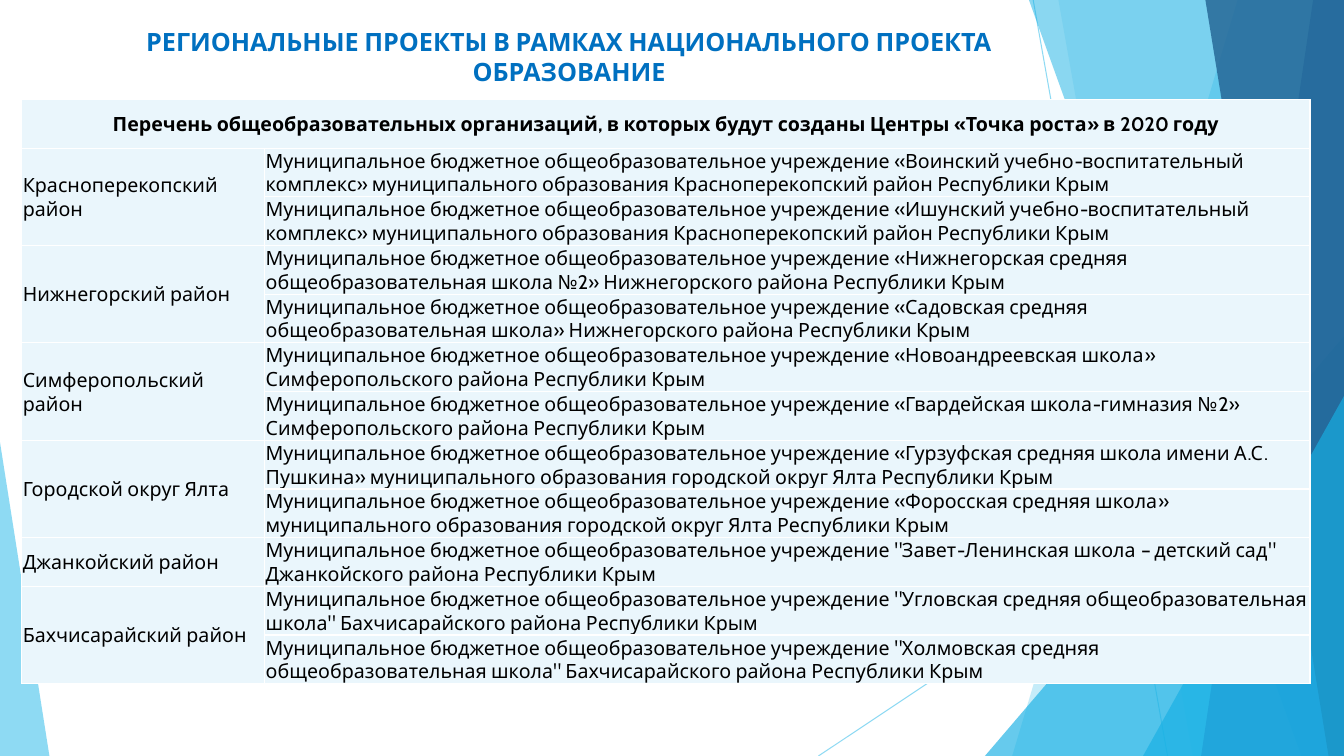
from lxml import etree
from pptx import Presentation
from pptx import util as u
from pptx.dml.color import RGBColor
from pptx.enum import shapes, text
from pptx.oxml import ns

FONT = "Cabin"
TITLE = ["РЕГИОНАЛЬНЫЕ ПРОЕКТЫ В РАМКАХ НАЦИОНАЛЬНОГО ПРОЕКТА", "ОБРАЗОВАНИЕ"]
HEADER = ("Перечень общеобразовательных организаций, в которых будут созданы "
          "Центры «Точка роста» в 2020 году")
SCHOOL_PREFIX = "Муниципальное бюджетное общеобразовательное учреждение "
DISTRICTS = [
    ("Красноперекопский район", [
        "«Воинский учебно-воспитательный комплекс» муниципального образования Красноперекопский район Республики Крым",
        "«Ишунский учебно-воспитательный комплекс» муниципального образования Красноперекопский район Республики Крым"]),
    ("Нижнегорский район", [
        "«Нижнегорская средняя общеобразовательная школа №2» Нижнегорского района Республики Крым",
        "«Садовская средняя общеобразовательная школа» Нижнегорского района Республики Крым"]),
    ("Симферопольский район", [
        "«Новоандреевская школа» Симферопольского района Республики Крым",
        "«Гвардейская школа-гимназия №2» Симферопольского района Республики Крым"]),
    ("Городской округ Ялта", [
        "«Гурзуфская средняя школа имени А.С. Пушкина» муниципального образования городской округ Ялта Республики Крым",
        "«Форосская средняя школа» муниципального образования городской округ Ялта Республики Крым"]),
    ("Джанкойский район", [
        '"Завет-Ленинская школа – детский сад" Джанкойского района Республики Крым']),
    ("Бахчисарайский район", [
        '"Угловская средняя общеобразовательная школа" Бахчисарайского района Республики Крым',
        '"Холмовская средняя общеобразовательная школа" Бахчисарайского района Республики Крым']),
]


def paint(target, color, opacity=100):
    target.solid()
    target.fore_color.rgb = RGBColor.from_string(color)
    if opacity < 100:
        for node in target._xPr.iter(ns.qn("a:srgbClr")):
            etree.SubElement(node, ns.qn("a:alpha"), val=str(opacity * 1000))


def add_span(para, words, size, color, bold=False):
    span = para.add_run()
    span.text = words
    span.font.name = FONT
    span.font.size = u.Pt(size)
    span.font.bold = bold
    paint(span.font.fill, color)


def finish(shape, color, opacity):
    shape.shadow.inherit = False
    shape.line.fill.background()
    paint(shape.fill, color, opacity)


def add_ray(page, start, end):
    ray = page.shapes.add_connector(
        shapes.MSO_CONNECTOR.STRAIGHT, *(u.Pt(value) for value in start + end))
    ray.line.width = u.Pt(0.75)
    paint(ray.line.fill, "5FCBEF", 70)
    etree.SubElement(ray._element.spPr, ns.qn("a:effectLst"))


def add_panel(page, box, top_x, bottom_x, color, opacity):
    left, top, width, height = box
    right, bottom = left + width, top + height
    corners = [(right, top), (right, bottom), (left + bottom_x, bottom)]
    builder = page.shapes.build_freeform(u.Pt(left + top_x), u.Pt(top))
    builder.add_line_segments([(u.Pt(x), u.Pt(y)) for x, y in corners], close=True)
    finish(builder.convert_to_shape(), color, opacity)


def add_wedge(page, box, x, width, height, apex, color, opacity):
    left, top, _, box_height = box
    wedge = page.shapes.add_shape(
        shapes.MSO_SHAPE.ISOSCELES_TRIANGLE, u.Pt(left + x),
        u.Pt(top + box_height - height), u.Pt(width), u.Pt(height))
    wedge.adjustments[0] = apex
    finish(wedge, color, opacity)


def add_backdrop(page, box):
    left, top, width, height = box
    add_ray(page, (left + 738, top), (left + 834, top + height))
    add_ray(page, (left + width, top + 290), (left + 584.6, top + height))
    add_panel(page, box, 884, 723, "5FCBEF", 36)
    add_panel(page, box, 756, 852, "5FCBEF", 20)
    add_wedge(page, box, 703.5, 256.5, 300, 1, "17B0E4", 66)
    add_panel(page, box, 735, 929.5, "17B0E4", 50)
    add_panel(page, box, 938, 858, "2E83C3", 70)
    add_panel(page, box, 861, 949, "226292", 80)
    add_wedge(page, box, 816.5, 143.5, 257, 1, "17B0E4", 66)
    add_wedge(page, box, 0, 35.3, 224, 0, "5FCBEF", 70)


def fill_cell(cell, words="", header=False):
    cell.vertical_anchor = text.MSO_ANCHOR.MIDDLE
    cell.margin_left = cell.margin_right = cell.margin_top = u.Pt(0.7)
    cell.margin_bottom = 0
    paint(cell.fill, "EAF6FC")
    properties = cell._tc.get_or_add_tcPr()
    for index, side in enumerate(("lnL", "lnR", "lnT", "lnB")):
        border = etree.Element(ns.qn(f"a:{side}"), w=str(u.Pt(1)))
        solid = etree.SubElement(border, ns.qn("a:solidFill"))
        etree.SubElement(solid, ns.qn("a:srgbClr"), val="FFFFFF")
        properties.insert(index, border)
    if words:
        para = cell.text_frame.paragraphs[0]
        para.alignment = text.PP_ALIGN.CENTER if header else text.PP_ALIGN.LEFT
        add_span(para, words, 14, "000000", header)


def add_schools(page, box):
    left, top, width, height = box
    row_count = 1 + sum(len(schools) for _, schools in DISTRICTS)
    table = page.shapes.add_table(
        row_count, 2, u.Pt(left), u.Pt(top), u.Pt(width), u.Pt(height)).table
    table.first_row = table.horz_banding = False
    district_width = 173.5
    table.columns[0].width = u.Pt(district_width)
    table.columns[1].width = u.Pt(width - district_width)
    for row in table.rows:
        row.height = u.Pt(height / row_count)

    fill_cell(table.cell(0, 0), HEADER, header=True)
    fill_cell(table.cell(0, 1))
    table.cell(0, 0).merge(table.cell(0, 1))
    first = 1
    for district, schools in DISTRICTS:
        for offset, school in enumerate(schools):
            fill_cell(table.cell(first + offset, 0), "" if offset else district)
            fill_cell(table.cell(first + offset, 1), SCHOOL_PREFIX + school)
        last = first + len(schools) - 1
        if last > first:
            table.cell(first, 0).merge(table.cell(last, 0))
        first = last + 1


def add_title(page, box):
    frame = page.shapes.add_textbox(*(u.Pt(value) for value in box)).text_frame
    frame.word_wrap = True
    for index, words in enumerate(TITLE):
        para = frame.add_paragraph() if index else frame.paragraphs[0]
        para.alignment = text.PP_ALIGN.CENTER
        add_span(para, words, 18, "0070C0", True)


def main():
    deck = Presentation()
    deck.slide_width, deck.slide_height = u.Pt(960), u.Pt(540)
    page = deck.slides.add_slide(deck.slide_layouts[6])
    add_backdrop(page, (0, 0, 960, 540))
    add_schools(page, (15.6, 71.2, 920.2, 415.2))
    add_title(page, (72, 15.1, 669, 51))
    deck.save("out.pptx")


if __name__ == "__main__":
    main()
